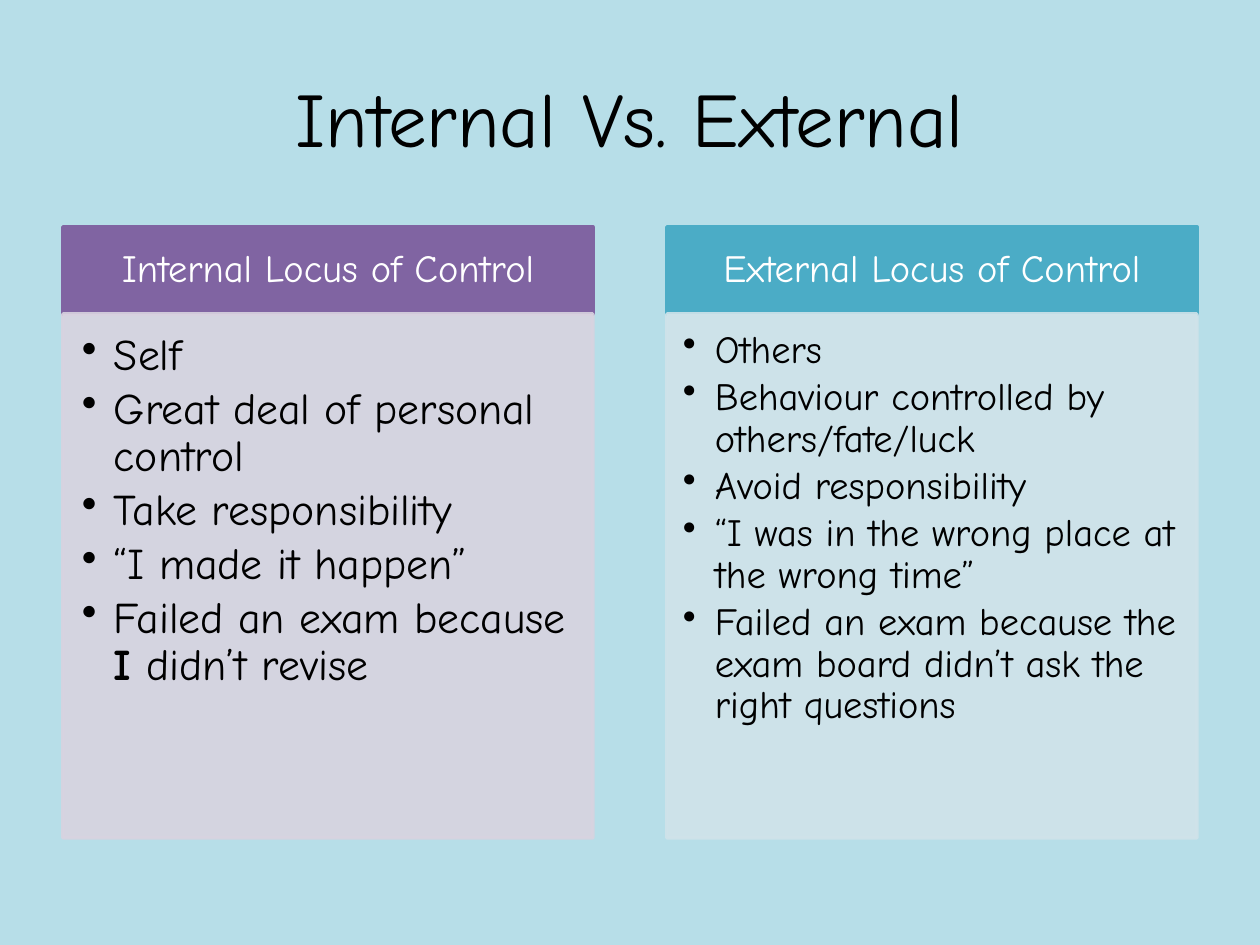
from dataclasses import dataclass

from lxml import etree
from pptx import Presentation
from pptx import util as u
from pptx.dml.color import RGBColor
from pptx.enum import shapes, text
from pptx.oxml.ns import qn

EMU_PER_PX = 914400 / 126


@dataclass(frozen=True)
class Theme:
    font: str = "Comic Neue"
    background: str = "B7DEE8"
    dark: str = "000000"
    light: str = "FFFFFF"
    title_size: int = 44
    header_size: int = 22
    outline: int = 2
    body_alpha: int = 90


@dataclass(frozen=True)
class Column:
    heading: str
    items: tuple[str, ...]  # asterisks enclose bold words
    header_fill: str
    body_fill: str
    body_size: int
    insets: tuple[int, int, int, int]  # left, top, right, bottom


THEME = Theme()
LEFT, TOP, WIDTH, COLUMN_STEP = 63, 227, 530, 604
HEADER_HEIGHT, BODY_HEIGHT = 87, 524
HEADER_INSETS = (21, 13, 21, 13)
BULLET_INDENT = 32

COLUMNS = (
    Column(
        "Internal Locus of Control",
        (
            "Self",
            "Great deal of personal control",
            "Take responsibility",
            "“I made it happen”",
            "Failed an exam because *I* didn’t revise",
        ),
        "8064A2", "D8D3E0", 25, (19, 19, 24, 28),
    ),
    Column(
        "External Locus of Control",
        (
            "Others",
            "Behaviour controlled by others/fate/luck",
            "Avoid responsibility",
            "“I was in the wrong place at the wrong time”",
            "Failed an exam because the exam board didn’t ask the right questions",
        ),
        "4BACC6", "D0E3EA", 22, (16, 16, 21, 24),
    ),
)


def px(length: int) -> u.Emu:
    return u.Emu(round(length * EMU_PER_PX))


def style_span(span, size: int, color: str, bold: bool = False) -> None:
    span.font.name = THEME.font
    span.font.size = u.Pt(size)
    span.font.bold = bold
    span.font.color.rgb = RGBColor.from_string(color)


def add_panel(page, left: int, top: int, height: int, color: str,
              insets: tuple[int, int, int, int], alpha: int = 100):
    """Draw one filled box and return it, ready for text."""
    box = page.shapes.add_shape(
        shapes.MSO_SHAPE.RECTANGLE, px(left), px(top), px(WIDTH), px(height))
    box.shadow.inherit = False
    box.fill.solid()
    box.line.width = u.Pt(THEME.outline)
    for paint in (box.fill.fore_color, box.line.color):
        paint.rgb = RGBColor.from_string(color)
    if alpha < 100:
        for paint in box._element.spPr.iter(qn("a:srgbClr")):
            etree.SubElement(paint, qn("a:alpha"), val=str(alpha * 1000))
    frame = box.text_frame
    frame.word_wrap = True
    (frame.margin_left, frame.margin_top,
     frame.margin_right, frame.margin_bottom) = map(px, insets)
    return box


def add_bullet(para, item: str, size: int) -> None:
    para.alignment = text.PP_ALIGN.LEFT
    para.line_spacing = 0.9
    para.space_after = u.Pt(round(size * 0.15, 1))
    properties = para._p.get_or_add_pPr()
    properties.set("marL", str(px(BULLET_INDENT)))
    properties.set("indent", str(-px(BULLET_INDENT)))
    etree.SubElement(properties, qn("a:buChar"), char="•")
    for index, part in enumerate(item.split("*")):
        span = para.add_run()
        span.text = part
        style_span(span, size, THEME.dark, bold=index % 2 == 1)


def add_column(page, column: Column, left: int) -> None:
    # Heading band
    header = add_panel(page, left, TOP, HEADER_HEIGHT, column.header_fill, HEADER_INSETS)
    header.text_frame.text = column.heading
    header.text_frame.vertical_anchor = text.MSO_ANCHOR.MIDDLE
    para = header.text_frame.paragraphs[0]
    para.alignment = text.PP_ALIGN.CENTER
    para.line_spacing = 0.9
    style_span(para.runs[0], THEME.header_size, THEME.light)

    # Bulleted body
    body = add_panel(page, left, TOP + HEADER_HEIGHT, BODY_HEIGHT, column.body_fill,
                     column.insets, THEME.body_alpha)
    frame = body.text_frame
    frame.vertical_anchor = text.MSO_ANCHOR.TOP
    for index, item in enumerate(column.items):
        para = frame.add_paragraph() if index else frame.paragraphs[0]
        add_bullet(para, item, column.body_size)


def add_title(page, wording: str) -> None:
    title = page.shapes.title
    title.left, title.top, title.width, title.height = map(px, (63, 38, 1134, 157))
    title.text_frame.text = wording
    title.text_frame.vertical_anchor = text.MSO_ANCHOR.MIDDLE
    para = title.text_frame.paragraphs[0]
    para.alignment = text.PP_ALIGN.CENTER
    style_span(para.runs[0], THEME.title_size, THEME.dark)


def main() -> None:
    deck = Presentation()
    deck.slide_width, deck.slide_height = px(1260), px(945)
    page = deck.slides.add_slide(deck.slide_layouts[5])
    page.background.fill.solid()
    page.background.fill.fore_color.rgb = RGBColor.from_string(THEME.background)

    add_title(page, "Internal Vs. External")
    for index, column in enumerate(COLUMNS):
        add_column(page, column, LEFT + index * COLUMN_STEP)
    deck.save("out.pptx")


if __name__ == "__main__":
    main()
